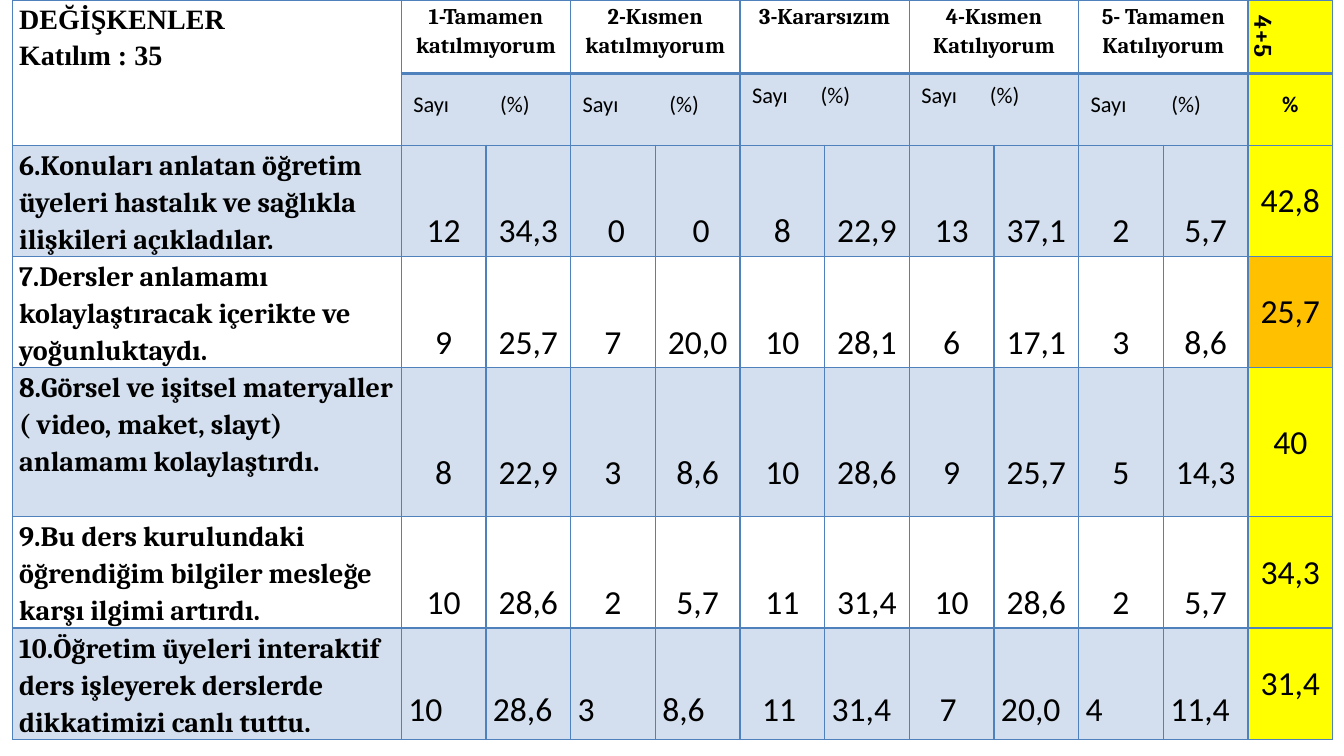
from dataclasses import dataclass, replace
from typing import NamedTuple, Optional, Union

from lxml import etree
from pptx import Presentation
from pptx import util as u
from pptx.dml.color import RGBColor
from pptx.enum import text
from pptx.oxml.ns import qn
from pptx.table import Table, _Cell

PX = 9144  # EMU per px, 100 px to the inch

BLACK = RGBColor(0x00, 0x00, 0x00)
BORDER = RGBColor(0x4F, 0x81, 0xBD)
BAND = RGBColor(0xD3, 0xDF, 0xEE)
YELLOW = RGBColor(0xFF, 0xFF, 0x00)
ORANGE = RGBColor(0xFF, 0xC0, 0x00)

LEFT, CENTER = text.PP_ALIGN.LEFT, text.PP_ALIGN.CENTER
TOP, MIDDLE = text.MSO_ANCHOR.TOP, text.MSO_ANCHOR.MIDDLE

QUESTION_WIDTH, VALUE_WIDTH = 386, 84
ROW_HEIGHTS = [73, 71, 110, 110, 148, 110, 110]
SCORE_COL = 11
THIN, THICK = 1, 2.25


class Insets(NamedTuple):
    left: int = 7
    top: int = 0
    right: int = 7
    bottom: int = 0


@dataclass(frozen=True)
class CellStyle:
    size: int
    font: str
    bold: bool = False
    align: text.PP_ALIGN = CENTER
    anchor: text.MSO_ANCHOR = MIDDLE
    spacing: Union[float, u.Length, None] = None
    insets: Insets = Insets()
    fill: Optional[RGBColor] = None


class Answer(NamedTuple):
    label: str
    percent_tab: int
    bottom_inset: int = 0


class Question(NamedTuple):
    wording: str
    values: str
    score: str
    score_fill: RGBColor = YELLOW


HEADING = CellStyle(20, "Times New Roman", True, LEFT, TOP, 1.15)
ANSWER = CellStyle(16, "Cambria", True, CENTER, TOP, 1.15)
TOP_TWO = replace(ANSWER, size=18, fill=YELLOW)
UNITS = CellStyle(16, "Calibri", align=LEFT, spacing=u.Pt(13), fill=BAND)
PERCENT = replace(UNITS, bold=True, align=CENTER, fill=YELLOW)
QUESTION = replace(HEADING, font="Cambria")
VALUE = CellStyle(24, "Calibri", spacing=2.5)
LAST_VALUE = replace(VALUE, align=LEFT, spacing=1.15)
LAST_TOP_INSET = 47
SCORE = CellStyle(24, "Calibri", insets=Insets(1, 1, 1, 0))

ANSWERS = [
    Answer("1-Tamamen katılmıyorum", 86),
    Answer("2-Kısmen katılmıyorum", 86),
    Answer("3-Kararsızım", 68, 18),
    Answer("4-Kısmen Katılıyorum", 68, 18),
    Answer("5- Tamamen Katılıyorum", 80),
]

QUESTIONS = [
    Question("6.Konuları anlatan öğretim üyeleri hastalık ve sağlıkla ilişkileri açıkladılar.",
             "12 34,3 0 0 8 22,9 13 37,1 2 5,7", "42,8"),
    Question("7.Dersler anlamamı kolaylaştıracak içerikte ve yoğunluktaydı.",
             "9 25,7 7 20,0 10 28,1 6 17,1 3 8,6", "25,7", ORANGE),
    Question("8.Görsel ve işitsel materyaller ( video, maket, slayt) anlamamı kolaylaştırdı.",
             "8 22,9 3 8,6 10 28,6 9 25,7 5 14,3", "40"),
    Question("9.Bu ders kurulundaki öğrendiğim bilgiler mesleğe karşı ilgimi artırdı.",
             "10 28,6 2 5,7 11 31,4 10 28,6 2 5,7", "34,3"),
    Question("10.Öğretim üyeleri interaktif ders işleyerek derslerde dikkatimizi canlı tuttu.",
             "10 28,6 3 8,6 11 31,4 7 20,0 4 11,4", "31,4"),
]
LAST_LEFT_INSETS = {5: 22, 7: 30}


def px(length: int) -> u.Emu:
    return u.Emu(length * PX)


def draw_borders(cell: _Cell, top: float, bottom: float) -> None:
    properties = cell._tc.get_or_add_tcPr()
    for side, width in (("L", THIN), ("R", THIN), ("T", top), ("B", bottom)):
        line = etree.SubElement(properties, qn(f"a:ln{side}"), w=str(u.Pt(width)))
        fill = etree.SubElement(line, qn("a:solidFill"))
        etree.SubElement(fill, qn("a:srgbClr"), val=str(BORDER))


def write(cell: _Cell, wording: str, style: CellStyle) -> None:
    cell.text_frame.text = wording
    cell.vertical_anchor = style.anchor
    cell.margin_left, cell.margin_top, cell.margin_right, cell.margin_bottom = map(px, style.insets)
    if style.fill is None:
        cell.fill.background()
    else:
        cell.fill.solid()
        cell.fill.fore_color.rgb = style.fill
    for paragraph in cell.text_frame.paragraphs:
        paragraph.alignment = style.align
        paragraph.line_spacing = style.spacing
        for run in paragraph.runs:
            run.font.size = u.Pt(style.size)
            run.font.name = style.font
            run.font.bold = style.bold
            run.font.color.rgb = BLACK


def add_tab_stop(cell: _Cell, position: int) -> None:
    properties = cell.text_frame.paragraphs[0]._p.get_or_add_pPr()
    stops = etree.SubElement(properties, qn("a:tabLst"))
    etree.SubElement(stops, qn("a:tab"), pos=str(px(position)), algn="l")


def fill_header(survey: Table) -> None:
    survey.cell(0, 0).merge(survey.cell(1, 0))
    write(survey.cell(0, 0), "DEĞİŞKENLER\nKatılım : 35", HEADING)
    for index, answer in enumerate(ANSWERS):
        col = 1 + 2 * index
        for row in (0, 1):
            survey.cell(row, col).merge(survey.cell(row, col + 1))
        write(survey.cell(0, col), answer.label, ANSWER)
        units = survey.cell(1, col)
        write(units, "Sayı\t(%)", replace(UNITS, insets=Insets(left=12, bottom=answer.bottom_inset)))
        add_tab_stop(units, answer.percent_tab)
    top_two = survey.cell(0, SCORE_COL)
    write(top_two, "4+5", TOP_TWO)
    top_two._tc.get_or_add_tcPr().set("vert", "vert")
    write(survey.cell(1, SCORE_COL), "%", PERCENT)


def fill_question(survey: Table, index: int, question: Question) -> None:
    row = index + 2
    band = BAND if index % 2 == 0 else None
    is_last = index == len(QUESTIONS) - 1
    write(survey.cell(row, 0), question.wording, replace(QUESTION, fill=band))
    for col, value in enumerate(question.values.split(), start=1):
        if is_last:
            style = LAST_VALUE
            insets = Insets(left=LAST_LEFT_INSETS.get(col, 7), top=LAST_TOP_INSET)
        else:
            style = VALUE
            insets = Insets(left=14 if value == "0" else 7)
        write(survey.cell(row, col), value, replace(style, insets=insets, fill=band))
    write(survey.cell(row, SCORE_COL), question.score, replace(SCORE, fill=question.score_fill))


def main() -> None:
    deck = Presentation()
    deck.slide_width, deck.slide_height = px(1333), px(750)
    slide = deck.slides.add_slide(deck.slide_layouts[6])
    widths = [QUESTION_WIDTH] + [VALUE_WIDTH] * SCORE_COL
    survey = slide.shapes.add_table(
        len(ROW_HEIGHTS), len(widths), px(12), px(0), px(sum(widths)), px(sum(ROW_HEIGHTS))
    ).table
    survey.first_row = survey.horz_banding = False
    for column, width in zip(survey.columns, widths):
        column.width = px(width)
    for row, height in enumerate(ROW_HEIGHTS):
        survey.rows[row].height = px(height)
        for col in range(len(widths)):
            draw_borders(survey.cell(row, col),
                         top=THICK if row == 1 and col else THIN,
                         bottom=THICK if row == 0 and col else THIN)
    fill_header(survey)
    for index, question in enumerate(QUESTIONS):
        fill_question(survey, index, question)
    deck.save("out.pptx")


if __name__ == "__main__":
    main()
